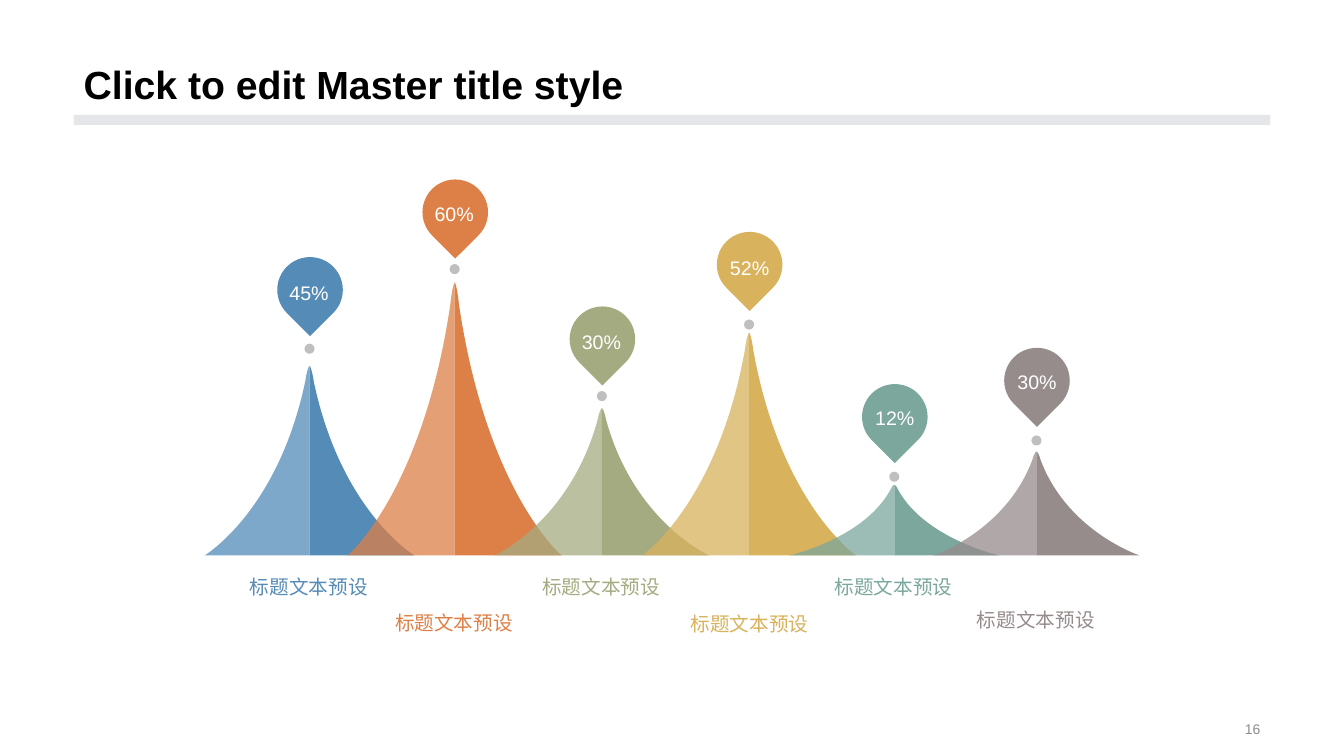
from dataclasses import dataclass

from lxml.etree import Element, SubElement
from pptx import Presentation
from pptx.dml.color import RGBColor
from pptx.enum.shapes import MSO_SHAPE as Shape
from pptx.enum.text import MSO_ANCHOR as Anchor, MSO_AUTO_SIZE as Fit, PP_ALIGN as Align
from pptx.oxml.ns import qn
from pptx.util import Pt

PX = 9144  # EMU in one px, 100 px to the inch


@dataclass(frozen=True)
class Theme:
    font: str = "Arial"
    ink: str = "000000"
    paper: str = "FFFFFF"
    rule: str = "E4E6EA"
    dot: str = "BFBFBF"
    page: str = "8C8C8C"
    head: int = 28
    label: int = 14
    small: int = 10
    glass: int = 75  # opacity of the left flanks, percent


@dataclass(frozen=True)
class Peak:
    mid: int
    half: int
    top: int
    dot: int
    drop: int
    tag: tuple  # left and top of the share
    note: tuple  # left and top of the caption
    color: str
    share: str


THEME = Theme()
BASE = 551
CAPTION = "标题文本预设"
PEAKS = [
    Peak(307, 104, 363, 341, 255, (277, 274), (238, 565), "548BB7", "45%"),
    Peak(451, 106, 280, 262, 178, (421, 195), (382, 601), "DD8047", "60%"),
    Peak(597, 106, 405, 388, 304, (567, 322), (528, 565), "A5AB81", "30%"),
    Peak(743, 106, 330, 317, 230, (714, 249), (675, 602), "D8B25C", "52%"),
    Peak(887, 104, 481, 468, 381, (858, 398), (818, 565), "7BA79D", "12%"),
    Peak(1028, 102, 448, 432, 345, (999, 362), (959, 598), "968C8C", "30%"),
]

# Flank outline in shares of half width and height: two handles, then the end
START = (0.04, 0.08)
CURVES = [
    ((0.3, 0.77), (1, 1), (1, 1)),
    ((0, 1), (0, 1), (0, 1)),
    ((0, 0), (0, 0), (0, 0)),
    ((0.01, 0), (0.03, 0.04), START),
]


def paint(shape, color: str) -> None:
    shape.shadow.inherit = False
    shape.fill.solid()
    shape.fill.fore_color.rgb = RGBColor.from_string(color)
    shape.line.fill.background()


def form(slide, kind: Shape, box: tuple, color: str):
    shape = slide.shapes.add_shape(kind, *(n * PX for n in box))
    paint(shape, color)
    return shape


def write(frame, text: str, size: int, color: str, align: Align = Align.LEFT,
          bold: bool = False):
    para = frame.paragraphs[0]
    para.alignment = align
    run = para.add_run()
    run.text = text
    font = run.font
    font.name, font.size, font.bold = THEME.font, Pt(size), bold
    font.color.rgb = RGBColor.from_string(color)
    return para


def label(slide, box: tuple, text: str, size: int, color: str, align: Align,
          wrap: bool = False):
    frame = slide.shapes.add_textbox(*(n * PX for n in box)).text_frame
    frame.word_wrap = wrap
    write(frame, text, size, color, align)
    return frame


def flank(slide, peak: Peak, side: int):
    """One half of a peak: side -1 is left, 1 is right."""
    def place(point: tuple) -> tuple:
        x, y = point
        return (round((peak.mid + side * x * peak.half) * PX),
                round((peak.top + y * (BASE - peak.top)) * PX))

    pen = slide.shapes.build_freeform(*place(START))
    pen.add_line_segments([place(end) for *_, end in CURVES])
    shape = pen.convert_to_shape()
    paint(shape, peak.color)
    # Bend each line with its two handles
    lines = list(shape._element.iter(qn("a:lnTo")))
    for line, (*grips, _) in zip(lines, CURVES):
        line.tag = qn("a:cubicBezTo")
        for spot, grip in enumerate(grips):
            x, y = place(grip)
            line.insert(spot, Element(qn("a:pt"), x=str(x - shape.left),
                                      y=str(y - shape.top)))
    return shape


def draw(slide, peak: Peak) -> None:
    left = flank(slide, peak, -1)
    tint = left._element.spPr.find(f".//{qn('a:srgbClr')}")
    SubElement(tint, qn("a:alpha"), val=str(THEME.glass * 1000))
    flank(slide, peak, 1)
    # Marker above the tip
    form(slide, Shape.OVAL, (peak.mid - 5, peak.dot, 10, 10), THEME.dot)
    drop = form(slide, Shape.TEAR, (peak.mid - 32, peak.drop, 65, 65), peak.color)
    drop.rotation = 135
    label(slide, (*peak.tag, 59, 34), peak.share, THEME.label, THEME.paper,
          Align.CENTER)
    # Caption under the base
    label(slide, (*peak.note, 138, 34), CAPTION, THEME.label, peak.color,
          Align.LEFT)


def main() -> None:
    deck = Presentation()
    deck.slide_width, deck.slide_height = 1333 * PX, 750 * PX
    slide = deck.slides.add_slide(deck.slide_layouts[5])

    # Title and rule
    form(slide, Shape.RECTANGLE, (73, 114, 1187, 10), THEME.rule)
    title = slide.shapes.title
    title.left, title.top, title.width, title.height = (
        n * PX for n in (73, 0, 1187, 112))
    frame = title.text_frame
    frame.auto_size = Fit.NONE
    frame.vertical_anchor = Anchor.BOTTOM
    para = write(frame, "Click to edit Master title style", THEME.head,
                 THEME.ink, bold=True)
    para.line_spacing = 0.9

    # Page number
    page = label(slide, (942, 712, 318, 23), "16", THEME.small, THEME.page,
                 Align.RIGHT, wrap=True)
    page.vertical_anchor = Anchor.MIDDLE

    # Peaks
    for peak in PEAKS:
        draw(slide, peak)

    deck.save("out.pptx")


if __name__ == "__main__":
    main()
